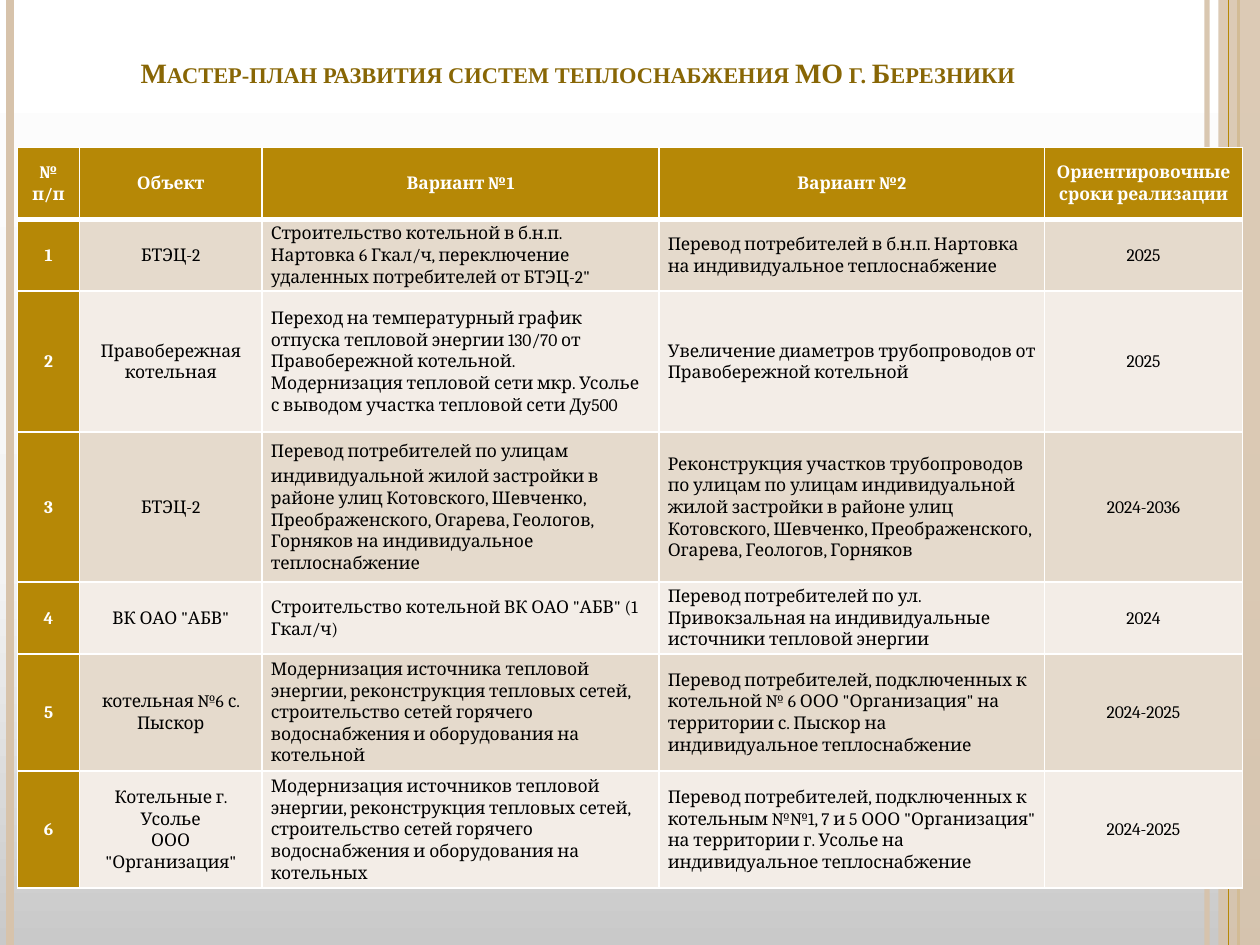
from copy import deepcopy
from dataclasses import dataclass

from lxml import etree
from pptx import Presentation
from pptx.dml.color import RGBColor
from pptx.enum.shapes import MSO_CONNECTOR, MSO_SHAPE
from pptx.enum.text import MSO_ANCHOR, PP_ALIGN
from pptx.oxml.ns import qn
from pptx.util import Inches, Pt

STRAIGHT = MSO_CONNECTOR.STRAIGHT
RECTANGLE = MSO_SHAPE.RECTANGLE
MIDDLE, BOTTOM = MSO_ANCHOR.MIDDLE, MSO_ANCHOR.BOTTOM
LEFT, CENTER = PP_ALIGN.LEFT, PP_ALIGN.CENTER


@dataclass(frozen=True)
class Theme:
    gold: str = "B68806"
    title: str = "886605"
    sand: str = "D7C3AB"
    bands: tuple = ("E5DACC", "F3EDE7")
    white: str = "FFFFFF"
    black: str = "000000"
    backdrop: tuple = ((0, "C9C9C9"), (0.4, "F4F4F4"), (1, "FFFFFF"))
    title_font: str = "Times New Roman"
    table_font: str = "Cambria"
    title_size: int = 16
    table_size: int = 10
    space_size: int = 12


THEME = Theme()
TITLE = "Мастер-план развития систем теплоснабжения МО г. Березники"
COLS = (0.49, 1.45, 3.15, 3.06, 1.57)
ROWS = (0.57, 0.57, 1.12, 1.19, 0.57, 0.93, 0.93)
CENTERED_COLS = (0, 1, 4)
HEADER = ("№ п/п", "Объект", "Вариант №1", "Вариант №2", "Ориентировочные сроки реализации")
PROJECTS = (
    ("БТЭЦ-2",
     'Строительство котельной в б.н.п. Нартовка 6 Гкал/ч, переключение удаленных потребителей от БТЭЦ-2"',
     "Перевод потребителей в б.н.п. Нартовка на индивидуальное теплоснабжение",
     "2025"),
    ("Правобережная котельная",
     "Переход на температурный график отпуска тепловой энергии 130/70 от Правобережной котельной. "
     "Модернизация тепловой сети мкр. Усолье с выводом участка тепловой сети Ду500",
     "Увеличение диаметров трубопроводов от Правобережной котельной",
     "2025"),
    ("БТЭЦ-2",
     ("Перевод потребителей по улицам индивидуальной", " ",
      "жилой застройки в районе улиц Котовского, Шевченко, Преображенского, Огарева, Геологов, "
      "Горняков на индивидуальное теплоснабжение"),
     "Реконструкция участков трубопроводов по улицам по улицам индивидуальной жилой застройки "
     "в районе улиц Котовского, Шевченко, Преображенского, Огарева, Геологов, Горняков",
     "2024-2036"),
    ('ВК ОАО "АБВ"',
     'Строительство котельной ВК ОАО "АБВ" (1 Гкал/ч)',
     "Перевод потребителей по ул. Привокзальная на индивидуальные источники тепловой энергии",
     "2024"),
    ("котельная №6 с. Пыскор",
     "Модернизация источника тепловой энергии, реконструкция тепловых сетей, "
     "строительство сетей горячего водоснабжения и оборудования на котельной",
     'Перевод потребителей, подключенных к котельной № 6 ООО "Организация" '
     "на территории с. Пыскор на индивидуальное теплоснабжение",
     "2024-2025"),
    ('Котельные г. Усолье\nООО "Организация"',
     "Модернизация источников тепловой энергии, реконструкция тепловых сетей, "
     "строительство сетей горячего водоснабжения и оборудования на котельных",
     'Перевод потребителей, подключенных к котельным №№1, 7 и 5 ООО "Организация" '
     "на территории г. Усолье на индивидуальное теплоснабжение",
     "2024-2025"),
)


def rgb(color):
    return RGBColor.from_string(color)


def set_alpha(shape, percent):
    for clr in shape._element.spPr.iter(qn("a:srgbClr")):
        etree.SubElement(clr, qn("a:alpha")).set("val", str(percent * 1000))


def style_run(r, font, size, color, bold):
    r.font.name, r.font.size, r.font.bold = font, Pt(size), bold
    r.font.color.rgb = rgb(color)


def set_background(s):
    fill = s.background.fill
    fill.gradient()
    fill.gradient_angle = 90
    stops = s._element.xpath(".//a:gsLst")[0]
    stops.append(deepcopy(stops[0]))
    for stop, (position, color) in zip(fill.gradient_stops, THEME.backdrop):
        stop.position = position
        stop.color.rgb = rgb(color)


def add_stripe(s, x, color, width):
    line = s.shapes.add_connector(STRAIGHT, Inches(x), 0, Inches(x), Inches(7.5))
    line.line.color.rgb = rgb(color)
    line.line.width = Pt(width)
    etree.SubElement(line._element.spPr, qn("a:effectLst"))
    return line


def add_side_band(s):
    sp = s.shapes.add_shape(RECTANGLE, Inches(9.67), 0, Inches(0.33), Inches(7.5))
    sp.shadow.inherit = False
    sp.fill.solid()
    sp.fill.fore_color.rgb = rgb(THEME.sand)
    sp.line.fill.background()
    set_alpha(sp, 87)


def set_title(s):
    sp = s.shapes.title
    sp.left, sp.top, sp.width, sp.height = (Inches(v) for v in (0.5, 0.3, 8.17, 0.46))
    tf = sp.text_frame
    tf.text = TITLE
    tf.word_wrap = True
    tf.vertical_anchor = BOTTOM
    p = tf.paragraphs[0]
    p.alignment = CENTER
    r = p.runs[0]
    style_run(r, THEME.title_font, THEME.title_size, THEME.title, True)
    r.font._element.set("cap", "small")


def set_borders(cell, top, bottom):
    tc_pr = cell._tc.get_or_add_tcPr()
    for side, width in (("L", 1), ("R", 1), ("T", top), ("B", bottom)):
        ln = etree.SubElement(tc_pr, qn(f"a:ln{side}"), w=str(Pt(width)))
        fill = etree.SubElement(ln, qn("a:solidFill"))
        etree.SubElement(fill, qn("a:srgbClr"), val=THEME.white)


def fill_cell(cell, content, row, col):
    accent = row == 0 or col == 0
    set_borders(cell, 3 if row == 1 else 1, 3 if row == 0 else 1)
    cell.fill.solid()
    cell.fill.fore_color.rgb = rgb(THEME.gold if accent else THEME.bands[(row - 1) % 2])
    cell.vertical_anchor = MIDDLE
    cell.margin_left = cell.margin_right = Inches(0.07)
    cell.margin_top = cell.margin_bottom = 0
    tf = cell.text_frame
    if isinstance(content, str):
        tf.text = content
    else:
        for piece in content:
            tf.paragraphs[0].add_run().text = piece
    for p in tf.paragraphs:
        p.alignment = CENTER if row == 0 or col in CENTERED_COLS else LEFT
        p.line_spacing = 1.07
        for r in p.runs:
            size = THEME.space_size if r.text == " " else THEME.table_size
            style_run(r, THEME.table_font, size, THEME.white if accent else THEME.black, accent)


def add_plan_table(s):
    table = s.shapes.add_table(len(ROWS), len(COLS), Inches(0.14), Inches(1.17),
                               Inches(sum(COLS)), Inches(sum(ROWS))).table
    for column, width in zip(table.columns, COLS):
        column.width = Inches(width)
    for row, height in zip(table.rows, ROWS):
        row.height = Inches(height)
    numbered = [(str(n), *project) for n, project in enumerate(PROJECTS, 1)]
    for i, values in enumerate([HEADER, *numbered]):
        for j, content in enumerate(values):
            fill_cell(table.cell(i, j), content, i, j)


def main():
    prs = Presentation()
    prs.slide_width, prs.slide_height = Inches(10), Inches(7.5)
    s = prs.slides.add_slide(prs.slide_layouts[5])
    set_background(s)
    set_alpha(add_stripe(s, 9.58, THEME.sand, 3), 93)
    add_stripe(s, 0.08, THEME.sand, 4.5)
    add_stripe(s, 9.83, THEME.gold, 1.5)
    add_side_band(s)
    add_stripe(s, 9.75, THEME.gold, 0.75)
    set_title(s)
    add_plan_table(s)
    prs.save("out.pptx")


if __name__ == "__main__":
    main()
